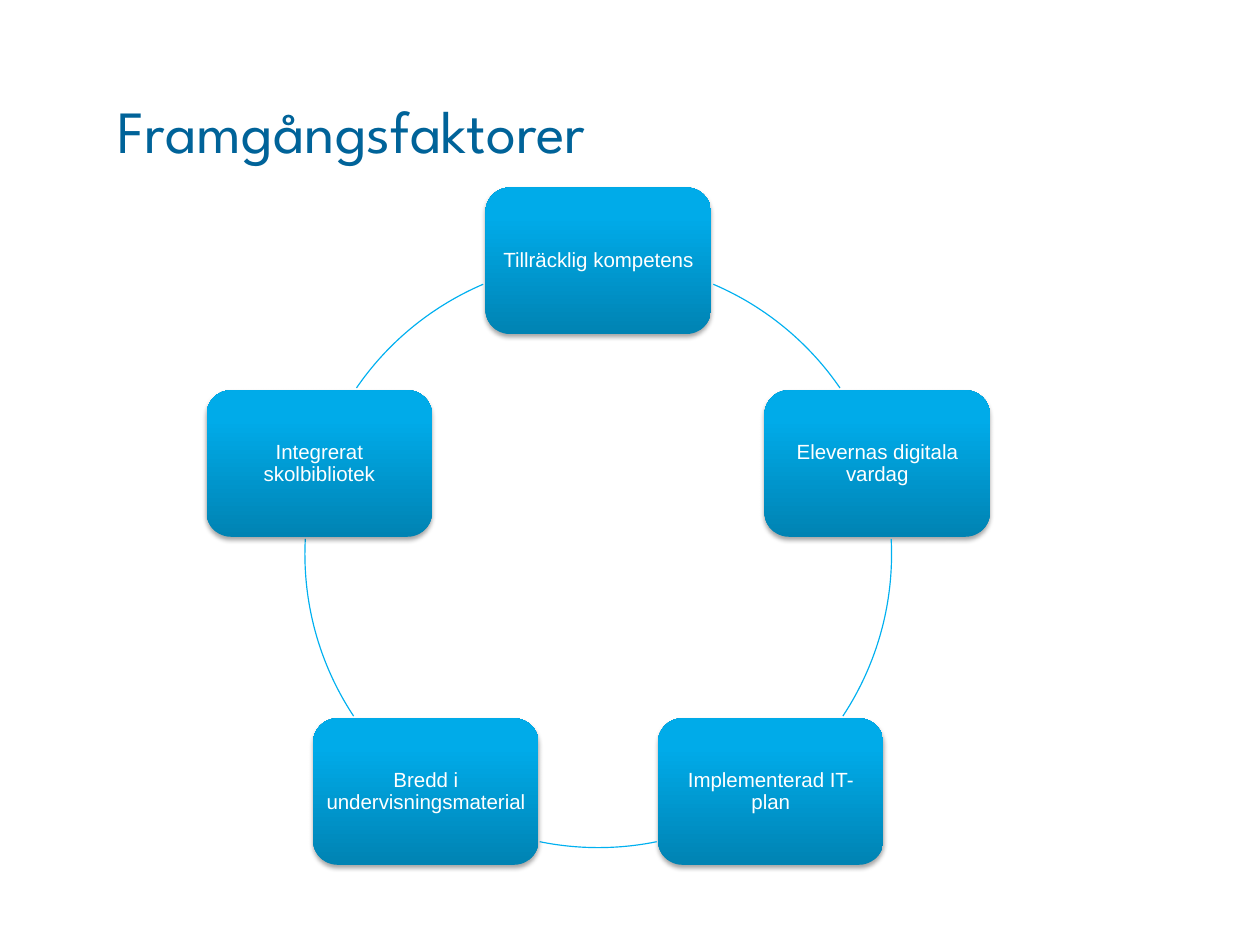
from copy import deepcopy
from math import cos, radians, sin

from pptx import Presentation
from pptx.dml.color import RGBColor
from pptx.enum.shapes import MSO_SHAPE
from pptx.enum.text import MSO_ANCHOR, MSO_AUTO_SIZE, PP_ALIGN
from pptx.oxml import parse_xml
from pptx.oxml.ns import nsdecls, qn
from pptx.util import Cm, Pt

ROUNDED, ARC = MSO_SHAPE.ROUNDED_RECTANGLE, MSO_SHAPE.ARC
TOP, MIDDLE = MSO_ANCHOR.TOP, MSO_ANCHOR.MIDDLE
LEFT, CENTER = PP_ALIGN.LEFT, PP_ALIGN.CENTER
NO_AUTOFIT = MSO_AUTO_SIZE.NONE

THEME = {
    "title": {"name": "League Spartan", "size": Pt(38), "color": "006399"},
    "box": {"name": "Arial", "size": Pt(13), "color": "FFFFFF"},
    "gradient": [(0, "0083B3"), (0.8, "00ABE9"), (1, "00ABEA")],
    "ring": "00B0F0",
}
SHADOW = (
    f'<a:outerShdw {nsdecls("a")} blurRad="39370" dist="22860" dir="5400000" rotWithShape="0">'
    '<a:srgbClr val="000000"><a:alpha val="35000"/></a:srgbClr></a:outerShdw>'
)

# Clockwise from the top: label, then start and end angle of the arc that follows
FACTORS = [
    ("Tillräcklig kompetens", 293.1, 325.5),
    ("Elevernas digitala vardag", 357, 33.5),
    ("Implementerad IT-plan", 78.5, 101.5),
    ("Bredd i undervisningsmaterial", 146.5, 183),
    ("Integrerat skolbibliotek", 214.5, 246.9),
]
CENTER_X, CENTER_Y, RADIUS = 13.4, 12.41, 6.57
BOX_W, BOX_H = 5.05, 3.28


def write(sp, text, style, align, anchor, inset):
    tf = sp.text_frame
    frame = {"word_wrap": True, "auto_size": NO_AUTOFIT, "vertical_anchor": anchor}
    for side in ("left", "right", "top", "bottom"):
        frame[f"margin_{side}"] = Cm(inset)
    for name, value in frame.items():
        setattr(tf, name, value)
    p = tf.paragraphs[0]
    p.alignment, p.line_spacing = align, 0.9
    r = p.add_run()
    r.text = text
    for name in ("name", "size"):
        setattr(r.font, name, THEME[style][name])
    r.font.color.rgb = RGBColor.from_string(THEME[style]["color"])


def fill_gradient(sp):
    sp.fill.gradient()
    sp.fill.gradient_angle = 90
    gs_list = sp.element.spPr.find(".//" + qn("a:gsLst"))
    gs_list.append(deepcopy(gs_list[-1]))
    for stop, (position, color) in zip(sp.fill.gradient_stops, THEME["gradient"]):
        stop.position = position
        stop.color.rgb = RGBColor.from_string(color)


prs = Presentation()
prs.slide_width, prs.slide_height = Cm(28.22), Cm(21.16)
slide = prs.slides.add_slide(prs.slide_layouts[5])

title = slide.shapes.title
title.left, title.top, title.width, title.height = Cm(2.54), Cm(2.18), Cm(23.01), Cm(3.15)
write(title, "Framgångsfaktorer", "title", LEFT, TOP, 0.1)

cycle = slide.shapes.add_group_shape().shapes
for i, (label, start, end) in enumerate(FACTORS):
    angle = radians(360 / len(FACTORS) * i - 90)
    x = CENTER_X + RADIUS * cos(angle) - BOX_W / 2
    y = CENTER_Y + RADIUS * sin(angle) - BOX_H / 2
    box = cycle.add_shape(ROUNDED, Cm(x), Cm(y), Cm(BOX_W), Cm(BOX_H))
    fill_gradient(box)
    box.line.fill.background()
    box.shadow.inherit = False
    box.element.spPr.find(qn("a:effectLst")).append(parse_xml(SHADOW))
    write(box, label, "box", CENTER, MIDDLE, 0.13)

    arc = cycle.add_shape(ARC, Cm(CENTER_X - RADIUS), Cm(CENTER_Y - RADIUS),
                          Cm(2 * RADIUS), Cm(2 * RADIUS))
    # Adjustments count 100000ths, arc angles 60000ths of a degree
    arc.adjustments[0], arc.adjustments[1] = start * 0.6, end * 0.6
    arc.fill.background()
    arc.line.color.rgb = RGBColor.from_string(THEME["ring"])
    arc.line.width = Pt(0.75)
    arc.shadow.inherit = False

prs.save("out.pptx")
